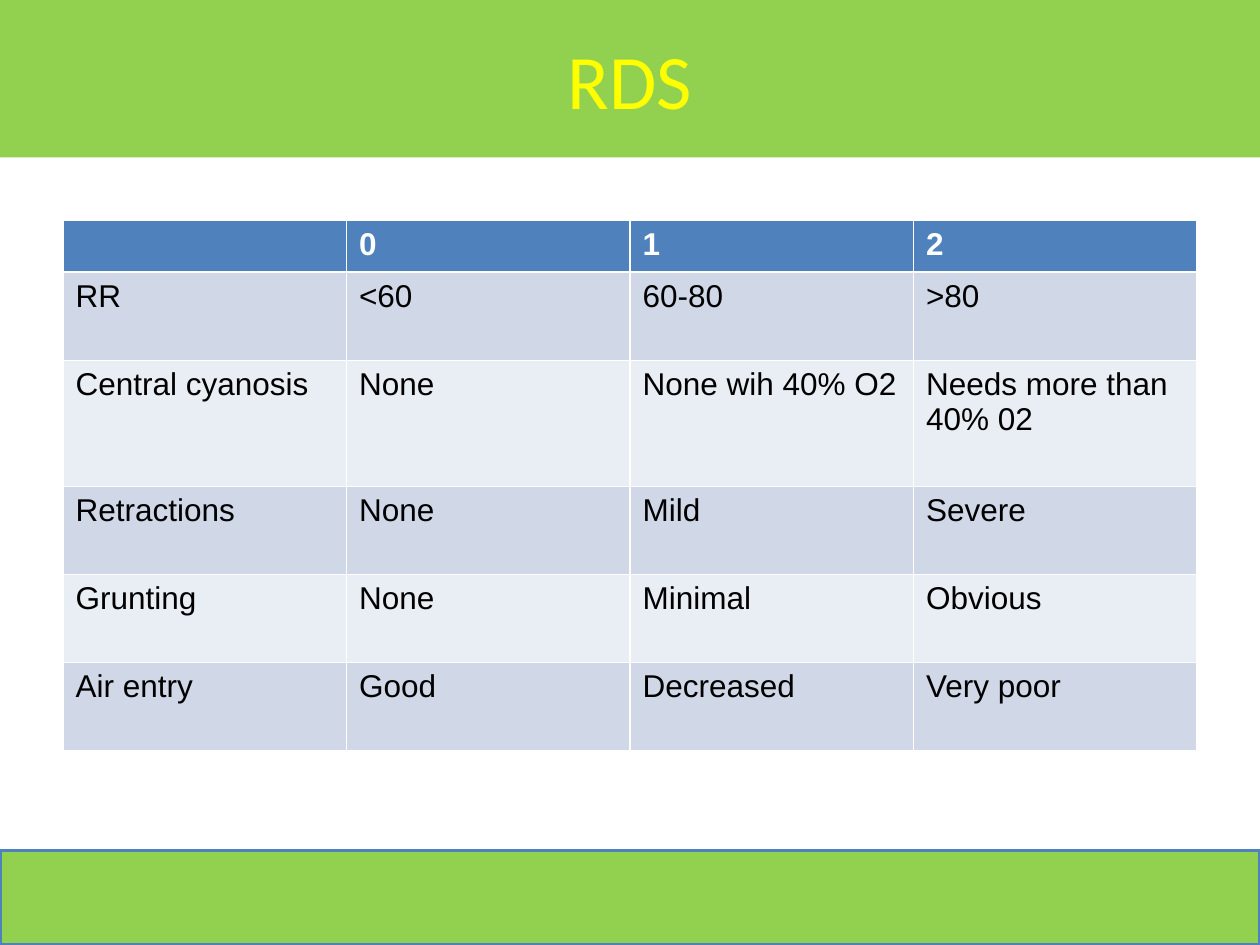
from dataclasses import dataclass

from pptx import Presentation
from pptx.dml.color import RGBColor
from pptx.enum.shapes import MSO_SHAPE
from pptx.enum.text import MSO_ANCHOR, PP_ALIGN
from pptx.util import Pt

RECT = MSO_SHAPE.RECTANGLE
MIDDLE = MSO_ANCHOR.MIDDLE
CENTER = PP_ALIGN.CENTER
TITLE_ONLY = 5
SCALE = 9144  # EMU per px, 100 px to the inch
WIDE, HIGH = 1000, 750


@dataclass(frozen=True)
class Theme:
    green: str = "92D050"
    blue: str = "4F81BD"
    yellow: str = "FFFF00"
    white: str = "FFFFFF"
    black: str = "000000"
    bands: tuple = ("D0D8E8", "E9EDF4")
    head_font: str = "Calibri"
    body_font: str = "Arial"
    head_size: int = 44
    body_size: int = 18


THEME = Theme()

SCORES = [
    ["", "0", "1", "2"],
    ["RR", "<60", "60-80", ">80"],
    ["Central cyanosis", "None", "None wih 40% O2", "Needs more than 40% 02"],
    ["Retractions", "None", "Mild", "Severe"],
    ["Grunting", "None", "Minimal", "Obvious"],
    ["Air entry", "Good", "Decreased", "Very poor"],
]
ROWS = [41, 70, 100, 70, 70, 70]


def px(*sizes):
    return [size * SCALE for size in sizes]


def paint(item, color):
    item.fill.solid()
    item.fill.fore_color.rgb = RGBColor.from_string(color)


def add_run(para, text, font, size, color, bold=False):
    run = para.add_run()
    run.text = text
    run.font.name = font
    run.font.size = Pt(size)
    run.font.bold = bold
    run.font.color.rgb = RGBColor.from_string(color)


def add_title(slide, box, text):
    title = slide.shapes.title
    title.left, title.top, title.width, title.height = px(*box)
    paint(title, THEME.green)
    frame = title.text_frame
    frame.vertical_anchor = MIDDLE
    para = frame.paragraphs[0]
    para.alignment = CENTER
    add_run(para, text, THEME.head_font, THEME.head_size, THEME.yellow)


def add_footer(slide, box):
    bar = slide.shapes.add_shape(RECT, *px(*box))
    bar.shadow.inherit = False
    paint(bar, THEME.green)
    bar.line.color.rgb = RGBColor.from_string(THEME.blue)
    bar.line.width = Pt(2)


def add_scores(slide, box):
    """Draw the score table; its white rules come from the default table style."""
    frame = slide.shapes.add_table(len(SCORES), len(SCORES[0]), *px(*box))
    table = frame.table
    for r, (texts, high) in enumerate(zip(SCORES, ROWS)):
        table.rows[r].height = high * SCALE
        head = r == 0
        fill = THEME.blue if head else THEME.bands[(r - 1) % 2]
        color = THEME.white if head else THEME.black
        for c, text in enumerate(texts):
            cell = table.cell(r, c)
            paint(cell, fill)
            if text:
                add_run(cell.text_frame.paragraphs[0], text, THEME.body_font,
                        THEME.body_size, color, head)


def main():
    deck = Presentation()
    deck.slide_width, deck.slide_height = px(WIDE, HIGH)
    slide = deck.slides.add_slide(deck.slide_layouts[TITLE_ONLY])
    add_footer(slide, (0, HIGH - 75, WIDE, 75))
    add_title(slide, (0, 0, WIDE, 125), "RDS")
    add_scores(slide, (50, 175, WIDE - 100, sum(ROWS)))
    deck.save("out.pptx")


if __name__ == "__main__":
    main()
